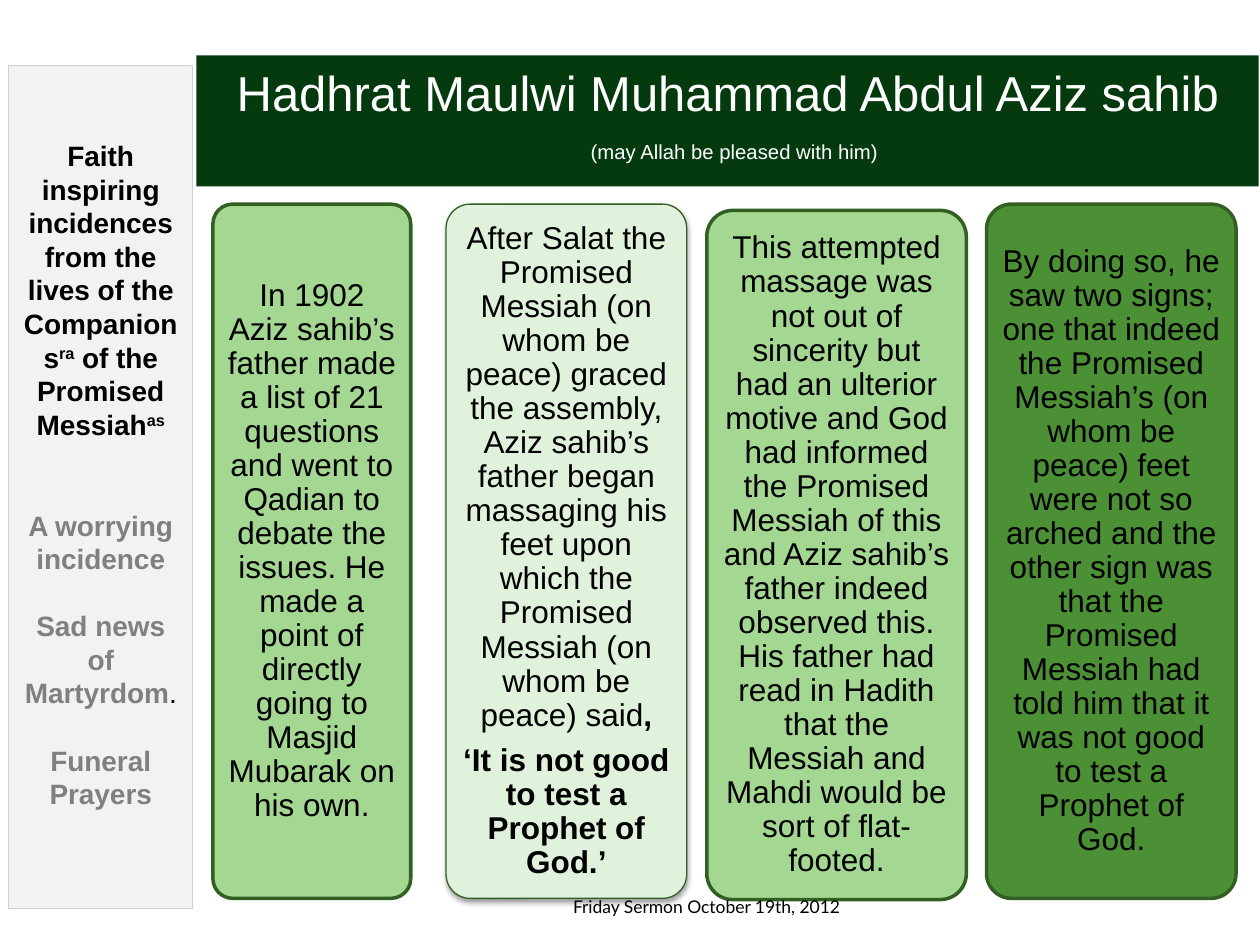
from lxml.etree import SubElement
from pptx import Presentation
from pptx.dml.color import RGBColor
from pptx.enum.shapes import MSO_SHAPE as Shape
from pptx.enum.text import MSO_ANCHOR as Anchor, MSO_AUTO_SIZE as AutoSize, PP_ALIGN as Align
from pptx.oxml.ns import qn
from pptx.util import Inches, Pt

BLACK = RGBColor(0x00, 0x00, 0x00)
WHITE = RGBColor(0xFF, 0xFF, 0xFF)
BANNER = RGBColor(0x04, 0x3A, 0x0D)
EDGE = RGBColor(0x32, 0x60, 0x23)
LIGHT = RGBColor(0xA3, 0xD7, 0x92)
PALE = RGBColor(0xE0, 0xF2, 0xDB)
DEEP = RGBColor(0x4B, 0x90, 0x34)
PANEL = RGBColor(0xF2, 0xF2, 0xF2)
PANEL_EDGE = RGBColor(0xCF, 0xCF, 0xCF)
GREY = RGBColor(0x80, 0x80, 0x80)

COLS, ROWS = 100, 75  # grid over the slide
SIDE_LINE = 19.2      # height of one sidebar line in points


def write(p, text, size=18, color=BLACK, bold=False, font="Arial", raised=False):
    """Add a formatted run to a paragraph."""
    r = p.add_run()
    r.text = text
    r.font.name, r.font.size, r.font.bold = font, Pt(size), bold
    r.font.color.rgb = color
    if raised:
        r.font._element.set("baseline", "30000")


class Slide:
    def __init__(self, prs):
        self.s = prs.slides.add_slide(prs.slide_layouts[6])
        self.col, self.row = prs.slide_width / COLS, prs.slide_height / ROWS

    def place(self, x, y, w, h):
        return [int(n) for n in (x * self.col, y * self.row, w * self.col, h * self.row)]

    def box(self, kind, at, fill, line=None, width=0.75):
        sp = self.s.shapes.add_shape(kind, *self.place(*at))
        sp.shadow.inherit = False
        sp.fill.solid()
        sp.fill.fore_color.rgb = fill
        if line is None:
            sp.line.fill.background()
        else:
            sp.line.color.rgb = line
            sp.line.width = Pt(width)
        sp.text_frame.word_wrap = True
        return sp

    def paragraphs(self, tf, items, gaps=None, **style):
        """Each item is a list of (text, format) runs; gaps are points before."""
        for i, runs in enumerate(items):
            p = tf.add_paragraph() if i else tf.paragraphs[0]
            p.alignment = Align.CENTER
            if i and gaps:
                p.space_before = Pt(gaps[i])
            for text, fmt in runs:
                write(p, text, **{**style, **fmt})

    def card(self, at, fill, items, raised=False):
        sp = self.box(Shape.ROUNDED_RECTANGLE, at, fill, EDGE, 0.75 if raised else 2)
        sp.adjustments[0] = 0.1
        if raised:
            self.drop_shadow(sp)
        tf = sp.text_frame
        tf.vertical_anchor = Anchor.MIDDLE
        tf.margin_left = tf.margin_right = tf.margin_top = tf.margin_bottom = Inches(0.07)
        self.paragraphs(tf, items)
        for p in tf.paragraphs:
            p.line_spacing = 0.9
            p.space_after = Pt(6.3)

    def drop_shadow(self, sp):
        effects = sp._element.spPr.find(qn("a:effectLst"))
        shadow = SubElement(effects, qn("a:outerShdw"), blurRad=str(Pt(3.1)),
                            dist=str(Pt(1.6)), dir="5400000", rotWithShape="0")
        clr = SubElement(shadow, qn("a:srgbClr"), val="000000")
        SubElement(clr, qn("a:alpha"), val="38000")

    def banner(self, at, items):
        tf = self.box(Shape.RECTANGLE, at, BANNER).text_frame
        tf.vertical_anchor = Anchor.MIDDLE
        self.paragraphs(tf, items, size=28, color=WHITE)

    def sidebar(self, at, items, gaps):
        tf = self.box(Shape.RECTANGLE, at, PANEL, PANEL_EDGE).text_frame
        tf.vertical_anchor = Anchor.TOP
        tf.margin_top = Inches(0.58)
        self.paragraphs(tf, items, gaps, size=16, color=GREY, bold=True)

    def caption(self, at, text, **fmt):
        tf = self.s.shapes.add_textbox(*self.place(*at)).text_frame
        tf.word_wrap = False
        tf.auto_size = AutoSize.SHAPE_TO_FIT_TEXT
        write(tf.paragraphs[0], text, **fmt)


# Left, top, width, height, fill and paragraphs of each story card
CARDS = [
    ((16.9, 16.2, 15.7, 55.1), LIGHT, [[(
        "In 1902 Aziz sahib’s father made a list of 21 questions and went to Qadian "
        "to debate the issues. He made a point of directly going to Masjid Mubarak "
        "on his own.", {})]]),
    ((35.4, 16.2, 19.1, 55.1), PALE, [
        [("After Salat the Promised Messiah (on whom be peace) graced the assembly, "
          "Aziz sahib’s father began massaging his feet upon which the Promised "
          "Messiah (on whom be peace) said", {}), (",", {"bold": True})],
        [("‘It is not good to test a Prophet of God.’", {"bold": True})]]),
    ((56.1, 16.7, 20.6, 54.7), LIGHT, [[(
        "This attempted massage was not out of sincerity but had an ulterior motive "
        "and God had informed the Promised Messiah of this and Aziz sahib’s father "
        "indeed observed this. His father had read in Hadith that the Messiah and "
        "Mahdi would be sort of flat-footed.", {})]]),
    ((78.3, 16.2, 19.8, 55.1), DEEP, [[(
        "By doing so, he saw two signs; one that indeed the Promised Messiah’s (on "
        "whom be peace) feet were not so arched and the other sign was that the "
        "Promised Messiah had told him that it was not good to test a Prophet of "
        "God.", {})]]),
]

TOPIC = {"color": BLACK}
HONORIFIC = {"color": BLACK, "raised": True}
SIDEBAR = [
    [("Faith inspiring incidences from the lives of the Companions", TOPIC),
     ("ra", HONORIFIC), (" of the Promised Messiah", TOPIC), ("as", HONORIFIC)],
    [("A worrying incidence", {})],
    [("Sad news of Martyrdom", {}), (".", {"color": BLACK, "bold": False})],
    [("Funeral Prayers", {})],
]


def main():
    prs = Presentation()
    prs.slide_width, prs.slide_height = Inches(10), Inches(7.5)
    slide = Slide(prs)

    # Story cards; the pale one floats on a shadow
    for at, fill, items in CARDS:
        slide.card(at, fill, items, raised=fill == PALE)

    # Title banner
    slide.banner((15.6, 4.4, 84.3, 10.4), [
        [("Hadhrat Maulwi Muhammad Abdul Aziz sahib", {})],
        [(" ", {}), ("(may Allah be pleased with him)", {"size": 20, "raised": True})]])

    # Sermon date
    slide.caption((44.5, 70.6, 24, 2.7), "Friday Sermon October 19th, 2012",
                  size=10, font="Lato")

    # Topic sidebar
    slide.sidebar((0.7, 5.2, 14.6, 66.9), SIDEBAR,
                  gaps=[0, 2 * SIDE_LINE, SIDE_LINE, SIDE_LINE])

    prs.save("out.pptx")


if __name__ == "__main__":
    main()
